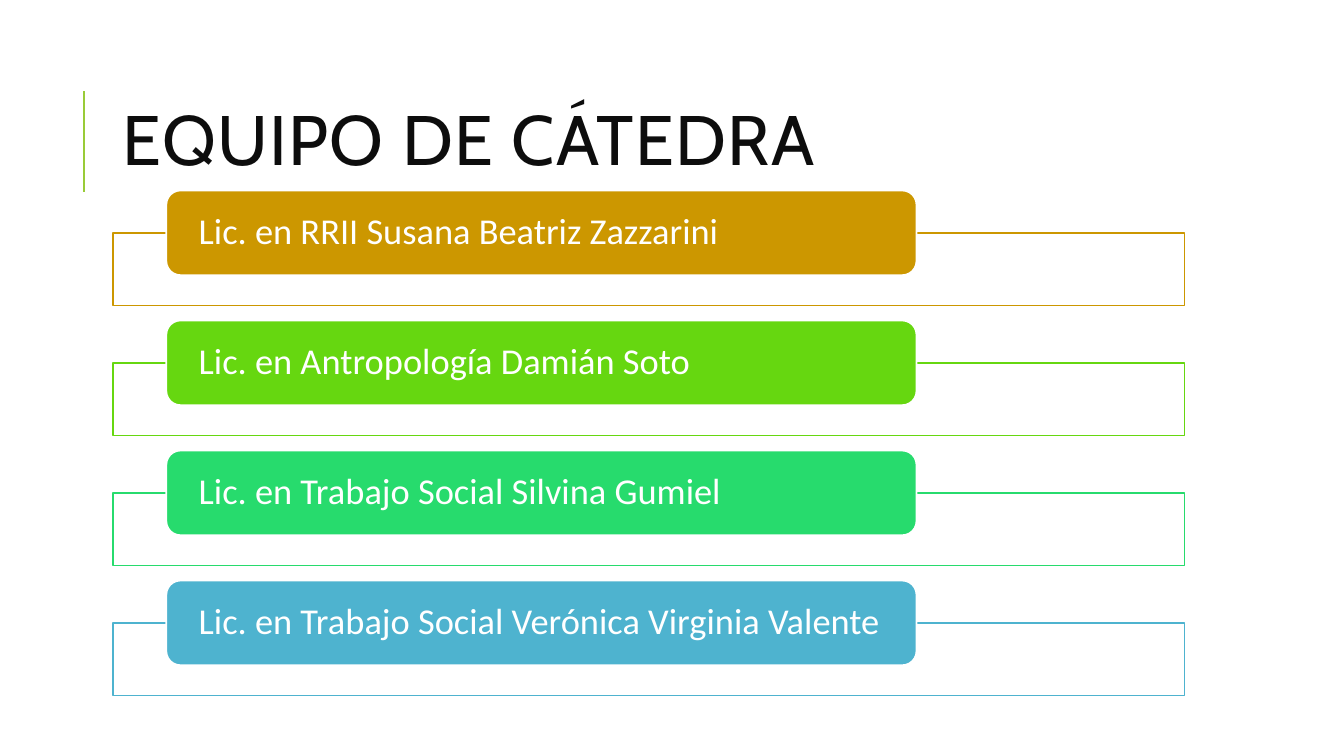
from lxml.etree import SubElement
from pptx import Presentation
from pptx.dml.color import RGBColor
from pptx.enum.shapes import MSO_CONNECTOR as Connector, MSO_SHAPE as Shape
from pptx.enum.text import MSO_ANCHOR as Anchor, PP_ALIGN as Align
from pptx.oxml.ns import qn
from pptx.util import Inches, Pt

TEAM = [
    ("Lic. en RRII Susana Beatriz Zazzarini", "CC9700"),
    ("Lic. en Antropología Damián Soto", "66D710"),
    ("Lic. en Trabajo Social Silvina Gumiel", "27DB6D"),
    ("Lic. en Trabajo Social Verónica Virginia Valente", "4EB3CF"),
]
LEFT, WIDTH = 1.12, 10.63
FIRST_TOP, ROW_STEP = 1.89, 1.29


def color(hex_code):
    return RGBColor.from_string(hex_code)


class SlideBuilder:
    title_font = "Cabin"
    body_font = "Calibri"
    dark = "0D0D0D"
    white = "FFFFFF"
    accent = "99CB38"
    outline = 1.25

    def __init__(self, slide):
        self.slide = slide

    def set_text(self, text_frame, text, font, size, hex_code, spacing):
        text_frame.word_wrap = True
        text_frame.vertical_anchor = Anchor.MIDDLE
        paragraph = text_frame.paragraphs[0]
        paragraph.text = text
        paragraph.alignment = Align.LEFT
        paragraph.line_spacing = spacing
        paragraph.font.name = font
        paragraph.font.size = Pt(size)
        paragraph.font.color.rgb = color(hex_code)
        return paragraph

    def title(self, text, left, top, width, height):
        box = self.slide.shapes.add_textbox(
            Inches(left), Inches(top), Inches(width), Inches(height))
        paragraph = self.set_text(
            box.text_frame, text, self.title_font, 50, self.dark, 0.8)
        paragraph.runs[0].font._element.set("spc", "100")

    def vertical_line(self, left, top, bottom):
        line = self.slide.shapes.add_connector(
            Connector.STRAIGHT,
            Inches(left), Inches(bottom), Inches(left), Inches(top))
        line.line.color.rgb = color(self.accent)
        line.line.width = Pt(1.5)
        SubElement(line._element.spPr, qn("a:effectLst"))

    def block(self, kind, left, top, width, height, fill, border):
        shape = self.slide.shapes.add_shape(
            kind, Inches(left), Inches(top), Inches(width), Inches(height))
        shape.shadow.inherit = False
        shape.fill.solid()
        shape.fill.fore_color.rgb = color(fill)
        shape.line.color.rgb = color(border)
        shape.line.width = Pt(self.outline)
        return shape

    def frame(self, left, top, width, height, border):
        shape = self.block(
            Shape.RECTANGLE, left, top, width, height, self.white, border)
        fill = shape._element.spPr.find(qn("a:solidFill"))
        SubElement(fill[0], qn("a:alpha"), val="90000")

    def label(self, text, left, top, width, height, fill):
        shape = self.block(
            Shape.ROUNDED_RECTANGLE, left, top, width, height, fill, self.white)
        text_frame = shape.text_frame
        text_frame.margin_left = text_frame.margin_right = Inches(0.28)
        text_frame.margin_top = text_frame.margin_bottom = 0
        self.set_text(text_frame, text, self.body_font, 26, self.white, 0.9)


def main():
    presentation = Presentation()
    presentation.slide_width = Inches(13.33)
    presentation.slide_height = Inches(7.5)
    slide = presentation.slides.add_slide(presentation.slide_layouts[6])
    builder = SlideBuilder(slide)
    builder.vertical_line(0.83, 0.9, 1.9)
    builder.title("EQUIPO DE CÁTEDRA", LEFT, 0.92, WIDTH, 1.05)
    for row, (member, hex_code) in enumerate(TEAM):
        top = FIRST_TOP + row * ROW_STEP
        builder.frame(LEFT, top + 0.42, WIDTH, 0.72, hex_code)
        builder.label(member, 1.65, top, 7.44, 0.84, hex_code)
    presentation.save("out.pptx")


if __name__ == "__main__":
    main()
